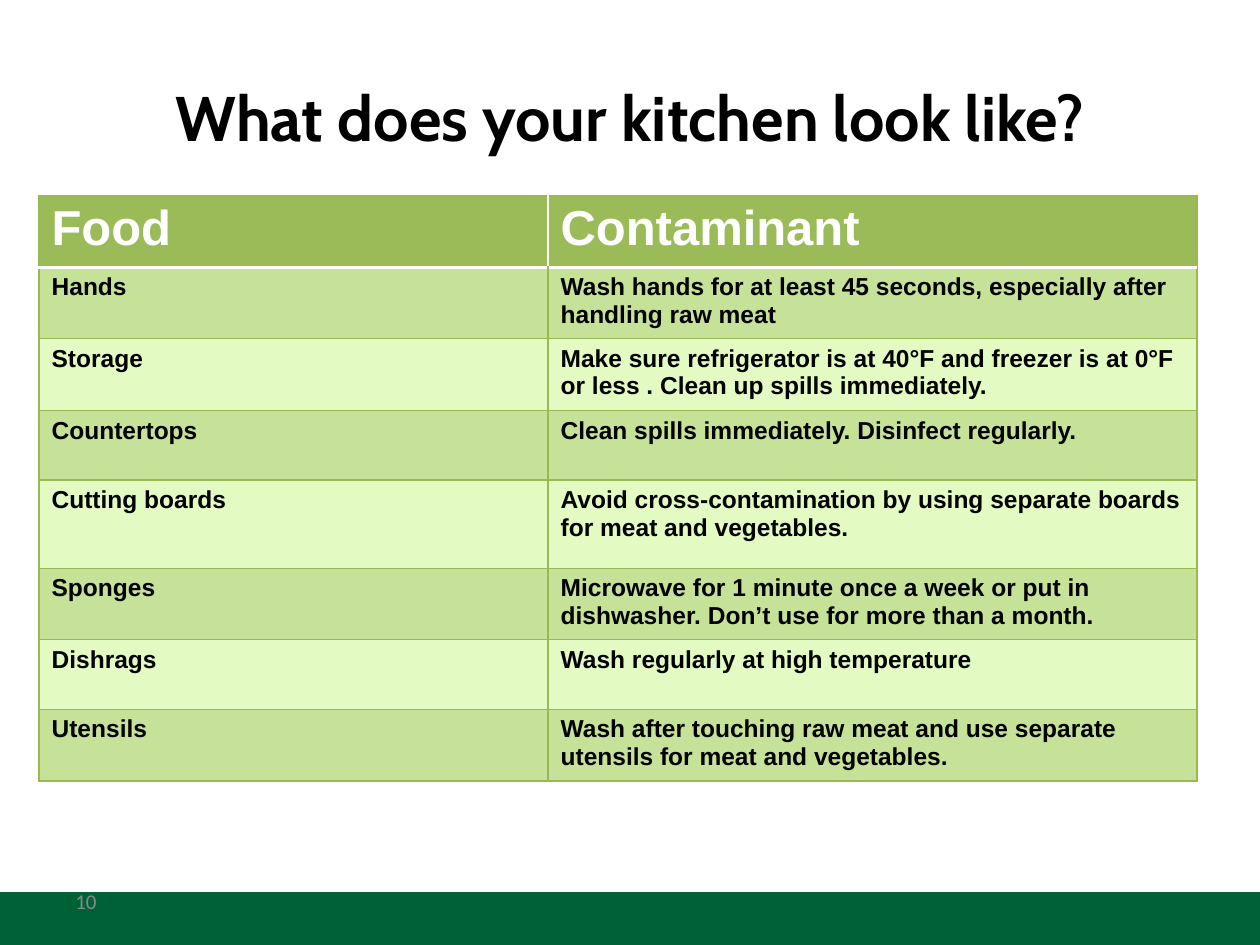
import dataclasses

import pptx
import pptx.dml.color
import pptx.enum.shapes
import pptx.enum.text
import pptx.oxml
import pptx.oxml.ns
import pptx.util
from lxml import etree

RGBColor = pptx.dml.color.RGBColor
BLACK = RGBColor(0x00, 0x00, 0x00)
WHITE = RGBColor(0xFF, 0xFF, 0xFF)
GREY = RGBColor(0x89, 0x89, 0x89)
FOREST = RGBColor(0x00, 0x60, 0x36)
HEADER_GREEN = RGBColor(0x9B, 0xBB, 0x59)
BAND_GREEN = RGBColor(0xC6, 0xE1, 0x98)
PALE_GREEN = RGBColor(0xE3, 0xFA, 0xC2)
RULE_GREEN = RGBColor(0x98, 0xB9, 0x55)

WIDTH, HEIGHT = pptx.util.Inches(10), pptx.util.Inches(7.5)
COLUMN_WIDTHS = (4.04, 5.15)
MIDDLE = pptx.enum.text.MSO_ANCHOR.MIDDLE


@dataclasses.dataclass(frozen=True)
class Row:
    item: str
    advice: str
    height: float = 0.57


@dataclasses.dataclass(frozen=True)
class Style:
    font: str
    size: float
    color: RGBColor
    bold: bool = False


TITLE = Style("Cabin", 36, BLACK, True)
HEADING = Style("Arial", 28, WHITE, True)
ENTRY = Style("Arial", 14, BLACK, True)
NUMBER = Style("Calibri", 12, GREY)

ROWS = (
    Row("Food", "Contaminant"),
    Row("Hands", "Wash hands for at least 45 seconds, especially after handling raw meat"),
    Row("Storage", "Make sure refrigerator is at 40°F and freezer is at 0°F or less . "
                   "Clean up spills immediately."),
    Row("Countertops", "Clean spills immediately. Disinfect regularly.", 0.55),
    Row("Cutting boards", "Avoid cross-contamination by using separate boards "
                          "for meat and vegetables.", 0.7),
    Row("Sponges", "Microwave for 1 minute once a week or put in dishwasher. "
                   "Don’t use for more than a month."),
    Row("Dishrags", "Wash regularly at high temperature", 0.55),
    Row("Utensils", "Wash after touching raw meat and use separate utensils "
                    "for meat and vegetables."),
)


def write(frame, text: str, style: Style):
    """Set one paragraph of text and return it."""
    frame.text = text
    para = frame.paragraphs[0]
    para.font.name = style.font
    para.font.size = pptx.util.Pt(style.size)
    para.font.color.rgb = style.color
    para.font.bold = style.bold
    return para


def place(shape, left: float, top: float, width: float, height: float) -> None:
    """Position a shape by shares of the slide's size."""
    shape.left, shape.top = int(WIDTH * left), int(HEIGHT * top)
    shape.width, shape.height = int(WIDTH * width), int(HEIGHT * height)


def set_border(cell, side: str, color: RGBColor, points: float) -> None:
    line = etree.Element(pptx.oxml.ns.qn(f"a:ln{side}"), w=str(pptx.util.Pt(points)))
    fill = etree.SubElement(line, pptx.oxml.ns.qn("a:solidFill"))
    etree.SubElement(fill, pptx.oxml.ns.qn("a:srgbClr"), val=str(color))
    properties = cell._tc.get_or_add_tcPr()
    # Borders come before the fill, in the order L, R, T, B
    count = len(properties.findall("*")) - 1
    properties.insert(count, line)


def style_cell(cell, row: int, column: int) -> None:
    header = row == 0
    cell.fill.solid()
    cell.fill.fore_color.rgb = (
        HEADER_GREEN if header else BAND_GREEN if row % 2 else PALE_GREEN)
    for side in "LRTB":
        inner = (side == "R" and column == 0) or (side == "L" and column == 1)
        if header and inner:
            continue
        if (header and side == "B") or (row == 1 and side == "T"):
            set_border(cell, side, WHITE, 2)
        else:
            set_border(cell, side, RULE_GREEN, 0.75)


def add_advice_table(page) -> None:
    inches = pptx.util.Inches
    table = page.shapes.add_table(
        len(ROWS), len(COLUMN_WIDTHS), inches(0.31), inches(1.55),
        inches(sum(COLUMN_WIDTHS)), inches(sum(row.height for row in ROWS))).table
    for column, width in zip(table.columns, COLUMN_WIDTHS):
        column.width = inches(width)
    for r, row in enumerate(ROWS):
        table.rows[r].height = inches(row.height)
        for c, text in enumerate((row.item, row.advice)):
            cell = table.cell(r, c)
            write(cell.text_frame, text, ENTRY if r else HEADING)
            style_cell(cell, r, c)


def main() -> None:
    deck = pptx.Presentation()
    deck.slide_width, deck.slide_height = WIDTH, HEIGHT
    page = deck.slides.add_slide(deck.slide_layouts[5])

    # Footer band
    band = page.shapes.add_shape(pptx.enum.shapes.MSO_SHAPE.RECTANGLE, 0, 0, 1, 1)
    place(band, 0, 0.944, 1, 0.056)
    band.shadow.inherit = False
    band.fill.solid()
    band.fill.fore_color.rgb = FOREST
    band.line.fill.background()

    # Title
    title = page.shapes.title
    place(title, 0.05, 0.04, 0.9, 1 / 6)
    title.text_frame.vertical_anchor = MIDDLE
    para = write(title.text_frame, "What does your kitchen look like?", TITLE)
    para.alignment = pptx.enum.text.PP_ALIGN.CENTER

    # Page number
    box = page.shapes.add_textbox(0, 0, 1, 1)
    place(box, 0.05, 0.927, 0.233, 0.053)
    box.text_frame.word_wrap = True
    box.text_frame.vertical_anchor = MIDDLE
    write(box.text_frame, "10", NUMBER)

    # Table of kitchen advice
    add_advice_table(page)

    deck.save("out.pptx")


if __name__ == "__main__":
    main()
